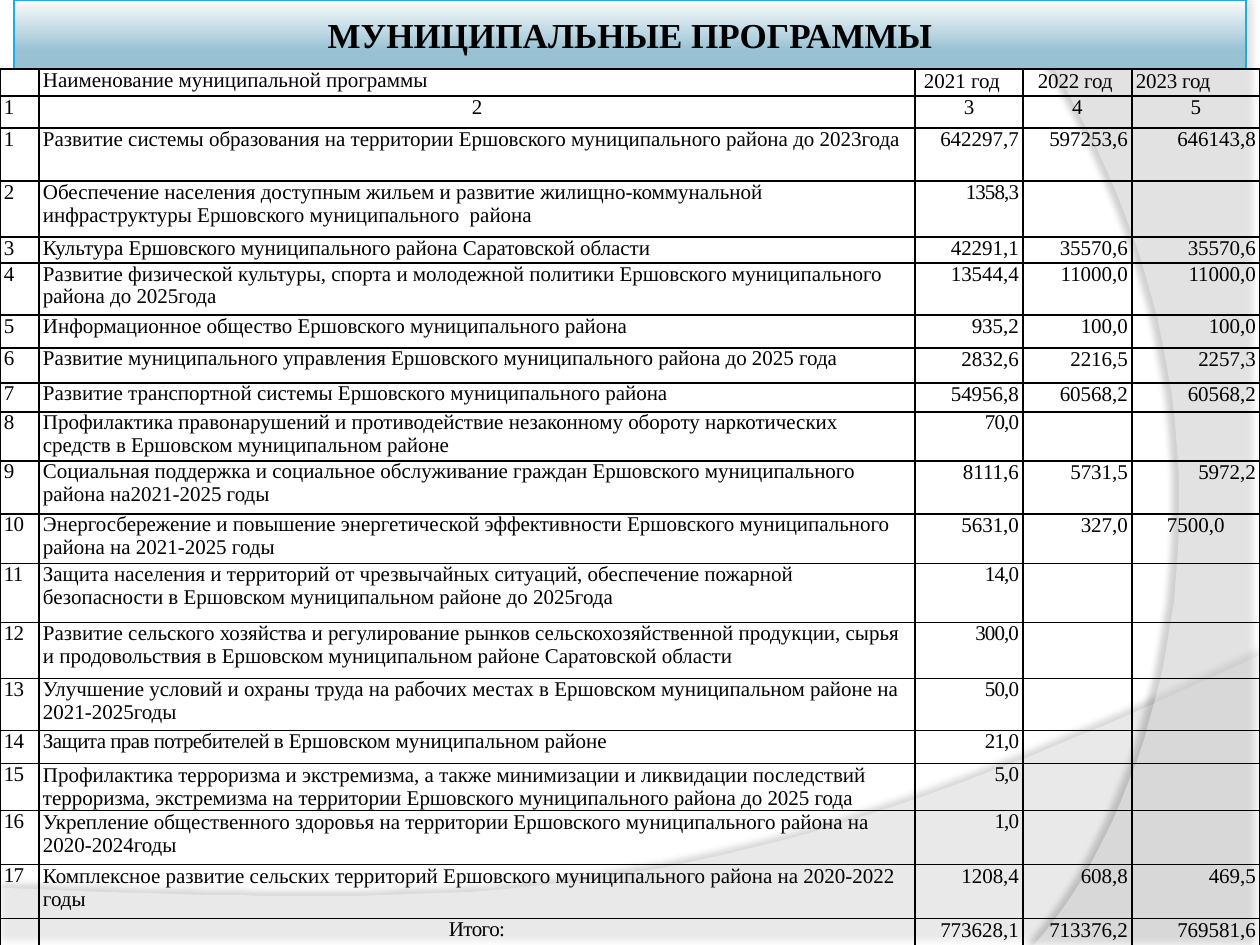
from itertools import product

from lxml.etree import SubElement
from pptx import Presentation
from pptx.dml.color import RGBColor
from pptx.enum.shapes import MSO_SHAPE
from pptx.enum.text import MSO_ANCHOR, PP_ALIGN
from pptx.oxml.ns import qn
from pptx.util import Emu, Pt

SCALE = 914400 / 126
FONT = "Times New Roman"
BLACK = "000000"
LEFT, CENTER, RIGHT = PP_ALIGN.LEFT, PP_ALIGN.CENTER, PP_ALIGN.RIGHT
TIGHT = 0.97
HEADER_LINE = Pt(13.9)

COLUMNS = [39, 876, 108, 109, 128]
# Header rows: text, alignment, line spacing, letter spacing, indent in px
HEADERS = [
    [("", LEFT, 1, 0, 0),
     ("Наименование муниципальной программы", LEFT, 1, 0, 0),
     ("2021 год", LEFT, HEADER_LINE, 0, 5),
     ("2022 год", LEFT, HEADER_LINE, -10, 11),
     ("2023 год", LEFT, HEADER_LINE, -10, 0)],
    [("1", LEFT, TIGHT, -40, 0), ("2", CENTER, TIGHT, -30, 0)]
    + [(digit, CENTER, TIGHT, -50, 0) for digit in "345"],
]
HEADER_HEIGHTS = [27, 32]
TOTAL_HEIGHT = 27
TOTALS = ["773628,1", "713376,2", "769581,6"]
# Row height in px, name, line spacing of the name, sums by year
PROGRAMS = [
    (53, "Развитие системы образования на территории Ершовского муниципального района до 2023года",
     TIGHT, ["642297,7", "597253,6", "646143,8"]),
    (56, "Обеспечение населения доступным жильем и развитие жилищно-коммунальной "
         "инфраструктуры Ершовского муниципального  района", 1, ["1358,3"]),
    (26, "Культура Ершовского муниципального района Саратовской области",
     TIGHT, ["42291,1", "35570,6", "35570,6"]),
    (52, "Развитие физической культуры, спорта и молодежной политики Ершовского "
         "муниципального района до 2025года", TIGHT, ["13544,4", "11000,0", "11000,0"]),
    (33, "Информационное общество Ершовского муниципального района",
     1, ["935,2", "100,0", "100,0"]),
    (35, "Развитие муниципального управления Ершовского муниципального района до 2025 года",
     TIGHT, ["2832,6", "2216,5", "2257,3"]),
    (29, "Развитие транспортной системы Ершовского муниципального района",
     TIGHT, ["54956,8", "60568,2", "60568,2"]),
    (49, "Профилактика правонарушений и противодействие незаконному обороту "
         "наркотических средств в Ершовском муниципальном районе", TIGHT, ["70,0"]),
    (53, "Социальная поддержка и социальное обслуживание граждан Ершовского "
         "муниципального района на2021-2025 годы", TIGHT, ["8111,6", "5731,5", "5972,2"]),
    (50, "Энергосбережение и повышение энергетической эффективности Ершовского "
         "муниципального района на 2021-2025 годы", TIGHT, ["5631,0", "327,0", "7500,0"]),
    (59, "Защита населения и территорий от чрезвычайных ситуаций, обеспечение пожарной "
         "безопасности в Ершовском муниципальном районе до 2025года", TIGHT, ["14,0"]),
    (56, "Развитие сельского хозяйства и регулирование рынков сельскохозяйственной "
         "продукции, сырья и продовольствия в Ершовском муниципальном районе "
         "Саратовской области", TIGHT, ["300,0"]),
    (52, "Улучшение условий и охраны труда на рабочих местах в Ершовском "
         "муниципальном районе на 2021-2025годы", TIGHT, ["50,0"]),
    (33, [("Защита прав потребителей в ", -30), ("Ершовском муниципальном районе", 0)],
     TIGHT, ["21,0"]),
    (47, "Профилактика терроризма и экстремизма, а также минимизации и ликвидации "
         "последствий терроризма, экстремизма на территории Ершовского муниципального "
         "района до 2025 года", 1, ["5,0"]),
    (54, "Укрепление общественного здоровья на территории Ершовского муниципального "
         "района на 2020-2024годы", 1, ["1,0"]),
    (54, "Комплексное развитие сельских территорий Ершовского муниципального района "
         "на 2020-2022 годы", 1, ["1208,4", "608,8", "469,5"]),
]


def px(length):
    return Emu(round(length * SCALE))


def color(value):
    return RGBColor.from_string(value)


def add_run(para, text, size, spacing=0, bold=False):
    span = para.add_run()
    span.text = text
    span.font.name, span.font.size, span.font.bold = FONT, Pt(size), bold
    span.font.color.rgb = color(BLACK)
    if spacing:
        span.font._element.set("spc", str(spacing))


def curve(start, first, second, end, steps=40):
    """Points along a cubic curve, without its start."""
    points = []
    for step in range(1, steps + 1):
        t = step / steps
        weights = ((1 - t) ** 3, 3 * t * (1 - t) ** 2, 3 * t * t * (1 - t), t ** 3)
        points.append(tuple(
            round(sum(w * p[axis] for w, p in zip(weights, (start, first, second, end))))
            for axis in (0, 1)))
    return points


def add_wave(page, box, points, opacity, shadow_opacity, distance, direction):
    left, top = box
    placed = [(left + x, top + y) for x, y in points]
    builder = page.shapes.build_freeform(*placed[0], scale=SCALE)
    builder.add_line_segments(placed[1:], close=True)
    wave = builder.convert_to_shape()
    wave.line.fill.background()
    wave.fill.solid()
    wave.fill.fore_color.rgb = color("FFFFFF")
    properties = wave._element.spPr
    fill = properties.find(qn("a:solidFill"))[0]
    SubElement(fill, qn("a:alpha"), val=str(opacity * 1000))
    # Soft shadow that draws the edge of the wave
    effects = SubElement(properties, qn("a:effectLst"))
    shadow = SubElement(effects, qn("a:outerShdw"), blurRad=str(Pt(4)),
                        dist=str(Pt(distance)), dir=str(direction * 60000),
                        algn="ctr", rotWithShape="0")
    tint = SubElement(shadow, qn("a:srgbClr"), val=BLACK)
    SubElement(tint, qn("a:alpha"), val=str(shadow_opacity * 1000))


def add_background(page):
    bottom = [(0, 233), (0, 290), (1260, 290), (1260, 0)]
    bottom += curve((1260, 0), (704, 263), (493, 251), (0, 233))
    add_wave(page, (0, 655), bottom, 45, 35, 3.5, 270)
    side = [(252, 2), (252, 945), (26, 945)]
    side += curve((26, 945), (170, 780), (275, 378), (0, 0))
    add_wave(page, (1008, 0), side, 40, 45, 4, 180)


def add_title(page, box, text):
    banner = page.shapes.add_shape(MSO_SHAPE.RECTANGLE, *map(px, box))
    banner.shadow.inherit = False
    banner.fill.gradient()
    banner.fill.gradient_angle = 270
    for stop, shade, position in zip(banner.fill.gradient_stops, ("FAFCFD", "98C1D3"), (0, 0.75)):
        stop.color.rgb = color(shade)
        stop.position = position
    banner.line.color.rgb = color("1CADE4")
    banner.line.width = Pt(0.75)
    frame = banner.text_frame
    frame.word_wrap = True
    frame.vertical_anchor = MSO_ANCHOR.MIDDLE
    para = frame.paragraphs[0]
    para.alignment = CENTER
    add_run(para, text, 20, bold=True)


def fill_cell(cell, text="", alignment=LEFT, line_spacing=1, spacing=0, indent=0):
    cell.margin_left = cell.margin_right = px(4)
    cell.margin_top = cell.margin_bottom = 0
    properties = cell._tc.get_or_add_tcPr()
    for side in "LRTB":
        border = SubElement(properties, qn(f"a:ln{side}"), w=str(Pt(1)))
        paint = SubElement(border, qn("a:solidFill"))
        SubElement(paint, qn("a:srgbClr"), val=BLACK)
    cell.fill.background()
    para = cell.text_frame.paragraphs[0]
    para.alignment, para.line_spacing = alignment, line_spacing
    if indent:
        para._p.get_or_add_pPr().set("marL", str(px(indent)))
    if not text:
        SubElement(para._p, qn("a:endParaRPr"), sz="1200")
        return
    for part, part_spacing in [(text, spacing)] if isinstance(text, str) else text:
        add_run(para, part, 12, part_spacing)


def program_row(number, name, name_spacing, sums):
    row = [(str(number), LEFT, TIGHT, -40, 0), (name, LEFT, name_spacing, 0, 0)]
    style = (RIGHT, 1, 0, 0) if len(sums) == 3 else (RIGHT, TIGHT, -50, 0)
    row += [(value, *style) for value in sums]
    row += [("",)] * (3 - len(sums))
    if number == 10:
        row[-1] = (sums[-1], LEFT, 1, 0, 31)
    return row


def add_programs(page, left, top):
    rows = HEADERS + [program_row(number, *program[1:])
                      for number, program in enumerate(PROGRAMS, 1)]
    rows.append([("",), ("Итого:", CENTER, TIGHT, -30, 0)]
                + [(value, RIGHT, 1, 0, 0) for value in TOTALS])
    heights = HEADER_HEIGHTS + [program[0] for program in PROGRAMS] + [TOTAL_HEIGHT]
    table = page.shapes.add_table(len(rows), len(COLUMNS), px(left), px(top),
                                  px(sum(COLUMNS)), px(sum(heights))).table
    table.first_row = table.horz_banding = False
    for column, width in zip(table.columns, COLUMNS):
        column.width = px(width)
    for row, height in zip(table.rows, heights):
        row.height = px(height)
    for row, column in product(range(len(rows)), range(len(COLUMNS))):
        fill_cell(table.cell(row, column), *rows[row][column])


def main():
    deck = Presentation()
    deck.slide_width, deck.slide_height = px(1260), px(945)
    page = deck.slides.add_slide(deck.slide_layouts[6])
    add_background(page)
    add_title(page, (14, 0, 1232, 69), "МУНИЦИПАЛЬНЫЕ ПРОГРАММЫ")
    add_programs(page, 0, 69)
    deck.save("out.pptx")


if __name__ == "__main__":
    main()
